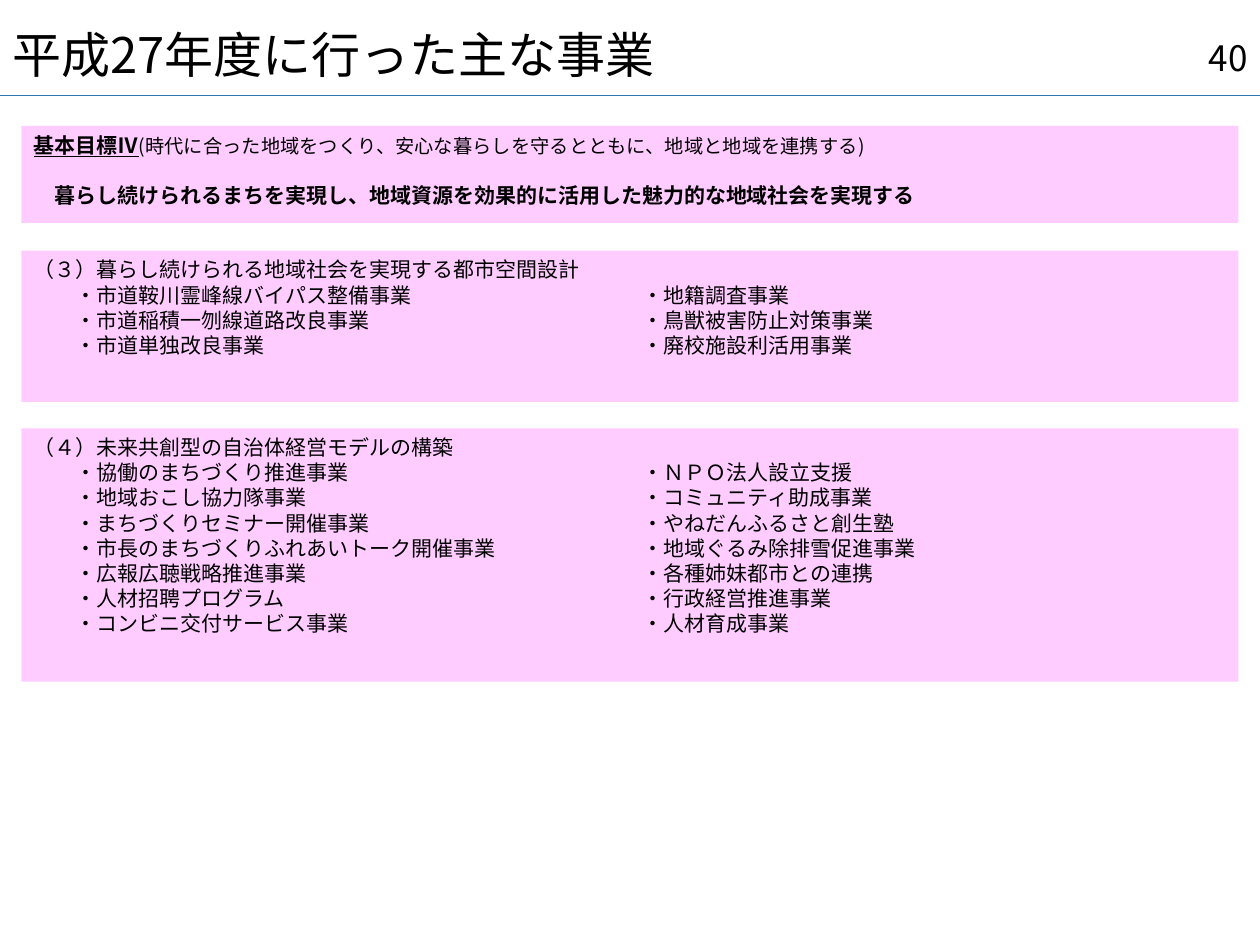
from lxml import etree
from pptx import Presentation
from pptx.dml.color import RGBColor
from pptx.enum.shapes import MSO_CONNECTOR, MSO_SHAPE
from pptx.enum.text import MSO_ANCHOR, PP_ALIGN
from pptx.oxml.ns import qn
from pptx.util import Pt

STRAIGHT = MSO_CONNECTOR.STRAIGHT
RECTANGLE = MSO_SHAPE.RECTANGLE
MIDDLE, TOP = MSO_ANCHOR.MIDDLE, MSO_ANCHOR.TOP
LEFT, RIGHT = PP_ALIGN.LEFT, PP_ALIGN.RIGHT

FONT = "Noto Sans CJK JP"
BLACK, PINK, BLUE = "000000", "FFCCFF", "2E75B6"
SLIDE_WIDTH, SLIDE_HEIGHT = 720, 540
PANEL_LEFT, PANEL_WIDTH = 12.24, 695.52
COLUMN_STOPS = (24, 348)

CITY_PLANNING = (
    "（３）暮らし続けられる地域社会を実現する都市空間設計",
    [
        ("市道鞍川霊峰線バイパス整備事業", "地籍調査事業"),
        ("市道稲積一刎線道路改良事業", "鳥獣被害防止対策事業"),
        ("市道単独改良事業", "廃校施設利活用事業"),
    ],
)
CITY_MANAGEMENT = (
    "（４）未来共創型の自治体経営モデルの構築",
    [
        ("協働のまちづくり推進事業", "ＮＰＯ法人設立支援"),
        ("地域おこし協力隊事業", "コミュニティ助成事業"),
        ("まちづくりセミナー開催事業", "やねだんふるさと創生塾"),
        ("市長のまちづくりふれあいトーク開催事業", "地域ぐるみ除排雪促進事業"),
        ("広報広聴戦略推進事業", "各種姉妹都市との連携"),
        ("人材招聘プログラム", "行政経営推進事業"),
        ("コンビニ交付サービス事業", "人材育成事業"),
    ],
)


def color(hex_string):
    return RGBColor.from_string(hex_string)


def format_run(run, size, bold=False, underline=False):
    font = run.font
    font.name, font.size = FONT, Pt(size)
    font.bold, font.underline = bold, underline
    font.color.rgb = color(BLACK)
    east_asian = etree.Element(qn("a:ea"), typeface=FONT)
    run._r.rPr.find(qn("a:latin")).addnext(east_asian)


def format_paragraph(paragraph, size, alignment=LEFT, bold=False):
    paragraph.alignment = alignment
    for run in paragraph.runs:
        format_run(run, size, bold)


def set_tab_stops(paragraph, positions):
    tab_list = etree.SubElement(paragraph._p.get_or_add_pPr(), qn("a:tabLst"))
    for position in positions:
        etree.SubElement(tab_list, qn("a:tab"), pos=str(Pt(position)), algn="l")


def add_header(slide, title_text, number, line_top):
    line = slide.shapes.add_connector(
        STRAIGHT, 0, Pt(line_top), Pt(SLIDE_WIDTH), Pt(line_top))
    line.line.color.rgb = color(BLUE)
    line.line.width = Pt(0.5)
    etree.SubElement(line._element.spPr, qn("a:effectLst"))

    title = slide.shapes.title
    title.left, title.top = Pt(0), Pt(22.3)
    title.width, title.height = Pt(SLIDE_WIDTH), Pt(20.9)
    title.text_frame.text = title_text
    title.text_frame.vertical_anchor = MIDDLE
    title.text_frame.paragraphs[0].line_spacing = 0.9
    format_paragraph(title.text_frame.paragraphs[0], 28)

    number_box = slide.shapes.add_textbox(Pt(558), Pt(18.7), Pt(162), Pt(28.8))
    frame = number_box.text_frame
    frame.word_wrap = True
    frame.vertical_anchor = MIDDLE
    frame.text = number
    format_paragraph(frame.paragraphs[0], 20, RIGHT)


def add_panel(slide, top, height):
    """Add a pink band and return its empty text frame."""
    panel = slide.shapes.add_shape(
        RECTANGLE, Pt(PANEL_LEFT), Pt(top), Pt(PANEL_WIDTH), Pt(height))
    panel.shadow.inherit = False
    panel.fill.solid()
    panel.fill.fore_color.rgb = color(PINK)
    panel.line.fill.background()
    panel.text_frame.word_wrap = True
    panel.text_frame.vertical_anchor = TOP
    return panel.text_frame


def add_goal_panel(slide, top, height):
    frame = add_panel(slide, top, height)
    heading = frame.paragraphs[0]
    heading.alignment = LEFT
    label, theme = heading.add_run(), heading.add_run()
    label.text = "基本目標Ⅳ"
    format_run(label, 12, bold=True, underline=True)
    theme.text = "(時代に合った地域をつくり、安心な暮らしを守るとともに、地域と地域を連携する)"
    format_run(theme, 11)

    goal = frame.add_paragraph()
    goal.text = "　暮らし続けられるまちを実現し、地域資源を効果的に活用した魅力的な地域社会を実現する"
    goal.space_before = Pt(14.4)
    format_paragraph(goal, 12, bold=True)


def add_project_panel(slide, top, height, heading, project_rows):
    frame = add_panel(slide, top, height)
    frame.text = heading
    format_paragraph(frame.paragraphs[0], 12)
    for projects in project_rows:
        paragraph = frame.add_paragraph()
        paragraph.text = "".join(f"\t・{project}" for project in projects)
        format_paragraph(paragraph, 12)
        set_tab_stops(paragraph, COLUMN_STOPS)


def main():
    presentation = Presentation()
    presentation.slide_width = Pt(SLIDE_WIDTH)
    presentation.slide_height = Pt(SLIDE_HEIGHT)
    slide = presentation.slides.add_slide(presentation.slide_layouts[5])
    add_header(slide, "平成27年度に行った主な事業", "40", 54.72)
    add_goal_panel(slide, 72, 55.44)
    add_project_panel(slide, 143.28, 86.4, *CITY_PLANNING)
    add_project_panel(slide, 244.8, 144.72, *CITY_MANAGEMENT)
    presentation.save("out.pptx")


if __name__ == "__main__":
    main()
